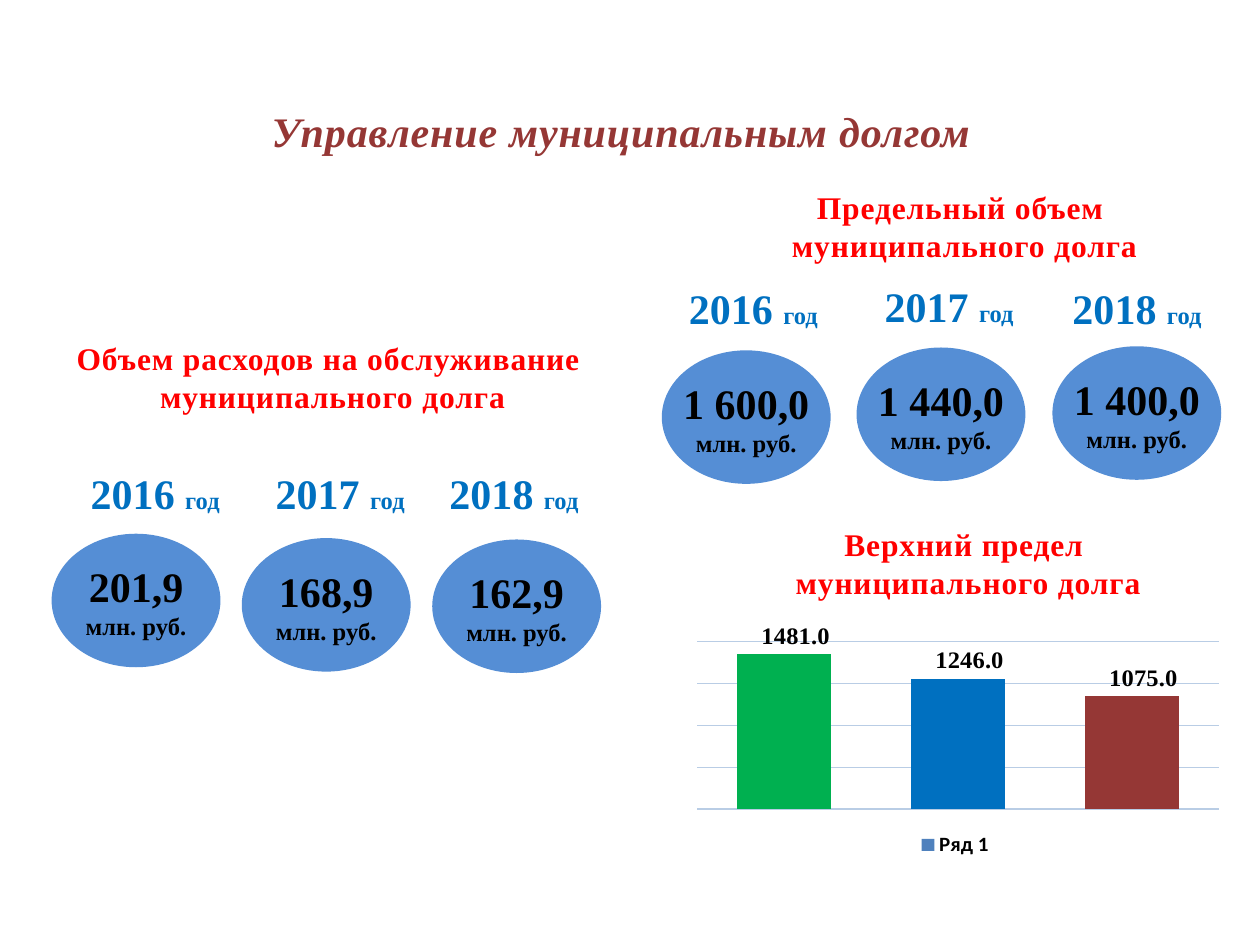
from lxml import etree
from pptx import Presentation
from pptx import util as u
from pptx.chart.data import CategoryChartData
from pptx.dml.color import RGBColor
from pptx.enum import chart as charts, shapes, text
from pptx.oxml import parse_xml
from pptx.oxml.ns import nsdecls, qn

SERIF = "Times New Roman"
RED, BLUE, BROWN, BLACK = "FF0000", "0070C0", "953735", "000000"
OVAL_WIDTH, OVAL_HEIGHT = 96.5, 76.3


def color(value):
    return RGBColor.from_string(value)


def style_font(font, size, value, name=SERIF):
    font.name, font.size, font.bold = name, u.Pt(size), True
    font.color.rgb = color(value)


def add_text(parent, box, lines, wrap=True):
    """Add centred lines, each a list of (text, size, colour) runs."""
    shape = parent.shapes.add_textbox(*map(u.Pt, box))
    frame = shape.text_frame
    frame.word_wrap = wrap
    for index, line in enumerate(lines):
        paragraph = frame.add_paragraph() if index else frame.paragraphs[0]
        paragraph.alignment = text.PP_ALIGN.CENTER
        for words, size, value in line:
            run = paragraph.add_run()
            run.text = words
            style_font(run.font, size, value)
    return frame


def add_heading(slide, box, lines, size=18, value=RED, italic=False):
    """Add a vertically centred heading with slightly spaced letters."""
    frame = add_text(slide, box, [[(line, size, value)] for line in lines])
    frame.vertical_anchor = text.MSO_ANCHOR.MIDDLE
    for paragraph in frame.paragraphs:
        for run in paragraph.runs:
            run.font.italic = italic
            run.font._element.set("spc", "50")


def add_year(slide, left, top, year):
    frame = add_text(slide, (left, top, 89.3, 36.35),
                     [[(f"{year} ", 24, BLUE), ("год", 14, BLUE)]], wrap=False)
    frame.auto_size = text.MSO_AUTO_SIZE.SHAPE_TO_FIT_TEXT


def add_amount(slide, left, top, amount):
    group = slide.shapes.add_group_shape()
    oval = group.shapes.add_shape(
        shapes.MSO_SHAPE.OVAL, *map(u.Pt, (left, top, OVAL_WIDTH, OVAL_HEIGHT)))
    oval.shadow.inherit = False
    oval.fill.solid()
    oval.fill.fore_color.rgb = color("558ED5")
    oval.line.fill.background()
    frame = add_text(group, (left, top + 12, OVAL_WIDTH, 53.3),
                     [[(amount, 24, BLACK)], [("млн. руб.", 14, BLACK)]])
    frame.auto_size = text.MSO_AUTO_SIZE.SHAPE_TO_FIT_TEXT


def manual_layout(**values):
    layout = parse_xml(f"<c:layout {nsdecls('c')}><c:manualLayout/></c:layout>")
    for name, value in values.items():
        etree.SubElement(layout[0], qn(f"c:{name}")).set("val", str(value))
    return layout


def set_plot_area(chart):
    area = chart._chartSpace.chart.plotArea
    for old in area.findall(qn("c:layout")):
        area.remove(old)
    area.insert(0, manual_layout(layoutTarget="inner", xMode="edge", yMode="edge",
                                 x=0.055, y=0.045, w=0.9, h=0.727))


def style_axes(chart):
    chart.category_axis.visible = False
    axis = chart.value_axis
    axis.visible = False
    axis.minimum_scale, axis.maximum_scale, axis.major_unit = 0, 1600, 400
    axis.has_major_gridlines = True
    axis.major_gridlines.format.line.color.rgb = color("B9CDE5")
    axis.major_gridlines.format.line.width = u.Pt(0.75)


def style_bars(plot):
    plot.gap_width = 86
    plot.vary_by_categories = False
    series = plot.series[0]
    series.format.fill.solid()
    series.format.fill.fore_color.rgb = color("4F81BD")
    labels = series.data_labels
    labels.show_value = True
    labels.number_format, labels.number_format_is_linked = "0.0", False
    labels.position = charts.XL_LABEL_POSITION.OUTSIDE_END
    style_font(labels.font, 14, BLACK)
    for index, value in enumerate(("00B050", BLUE, BROWN)):
        point = series.points[index]
        point.format.fill.solid()
        point.format.fill.fore_color.rgb = color(value)
        style_font(point.data_label.font, 14, BLACK)
        point.data_label.position = charts.XL_LABEL_POSITION.OUTSIDE_END
    for label in labels._element.findall(qn("c:dLbl")):
        label.insert(1, manual_layout(x=0.02, y=0))


def add_limit_chart(slide, box):
    data = CategoryChartData(number_format="0.0")
    data.categories = ["1", "2", "3"]
    data.add_series("Ряд 1", (1481, 1246, 1075))
    chart = slide.shapes.add_chart(
        charts.XL_CHART_TYPE.COLUMN_CLUSTERED, *map(u.Pt, box), data).chart
    chart.has_title = False
    style_font(chart.font, 12, BLACK, "Calibri")
    chart.has_legend = True
    chart.legend.position = charts.XL_LEGEND_POSITION.BOTTOM
    chart.legend.include_in_layout = False
    set_plot_area(chart)
    style_axes(chart)
    style_bars(chart.plots[0])


def main():
    presentation = Presentation()
    presentation.slide_width, presentation.slide_height = u.Pt(720), u.Pt(540)
    slide = presentation.slides.add_slide(presentation.slide_layouts[6])

    add_heading(slide, (98.6, 50.4, 512.6, 48.2),
                ["Управление муниципальным долгом"], 24, BROWN, italic=True)
    debt = "муниципального долга"
    add_heading(slide, (434.9, 105.1, 232.6, 48.2), ["Предельный объем ", debt])
    add_heading(slide, (34.6, 191.5, 311, 48.2),
                ["Объем расходов на обслуживание ", debt])
    add_heading(slide, (437, 297.4, 232.6, 48.2), ["Верхний предел ", debt])

    # Year, its left and top, then the amount with the left and top of its oval
    figures = [
        (2016, 385.9, 157.7, "1 600,0", 378.2, 200.2),
        (2017, 497.7, 157, "1 440,0", 489.5, 198.6),
        (2018, 605.1, 157.7, "1 400,0", 601.4, 197.9),
        (2016, 44.1, 263.5, "201,9", 29.5, 305),
        (2017, 149.8, 263.5, "168,9", 138.2, 307.5),
        (2018, 249.1, 263.5, "162,9", 247, 308.3),
    ]
    for year, year_left, year_top, amount, oval_left, oval_top in figures:
        add_year(slide, year_left, year_top, year)
        add_amount(slide, oval_left, oval_top, amount)

    add_limit_chart(slide, (380.2, 355.7, 331.2, 136.8))
    presentation.save("out.pptx")


if __name__ == "__main__":
    main()
